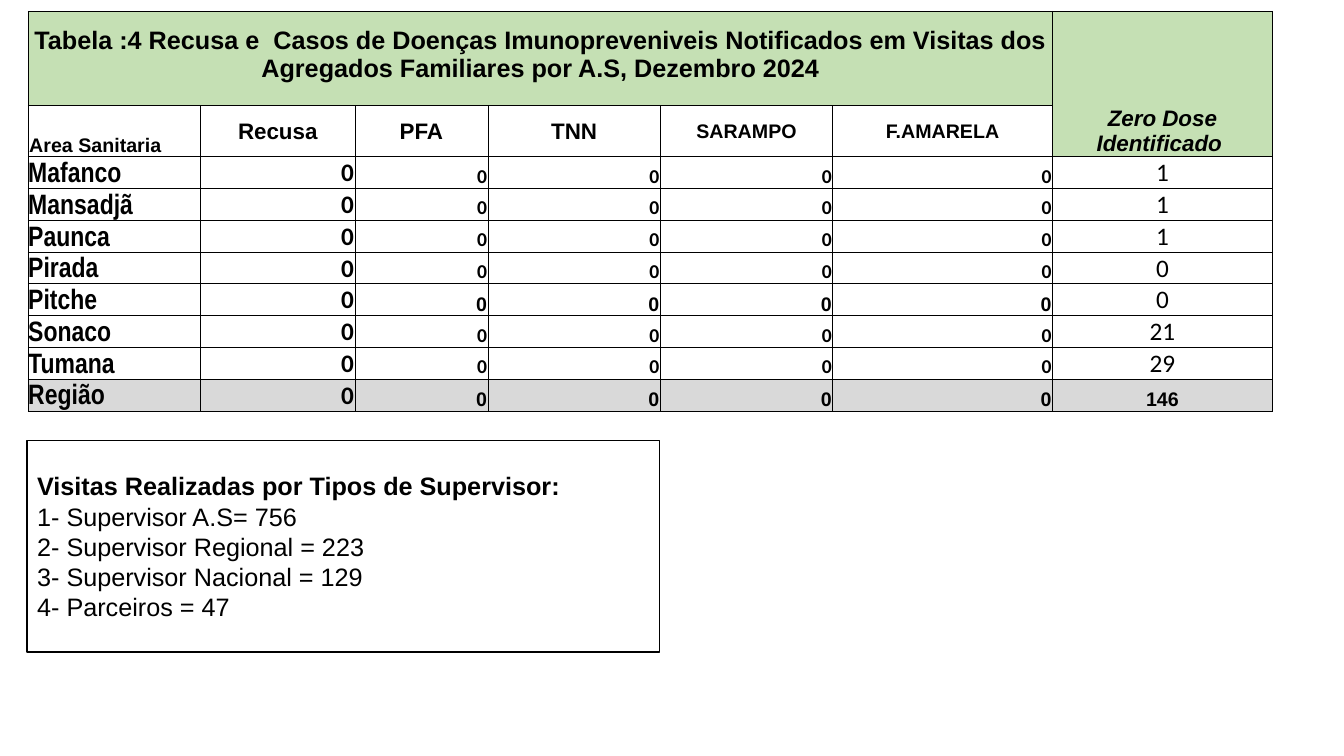
from dataclasses import dataclass

from lxml.etree import SubElement
from pptx import Presentation
from pptx.dml.color import RGBColor
from pptx.enum.shapes import MSO_SHAPE
from pptx.enum.text import MSO_ANCHOR, PP_ALIGN
from pptx.oxml.ns import qn
from pptx.util import Inches, Pt


@dataclass(frozen=True)
class Theme:
    black: RGBColor = RGBColor(0x00, 0x00, 0x00)
    white: RGBColor = RGBColor(0xFF, 0xFF, 0xFF)
    green: RGBColor = RGBColor(0xC5, 0xE0, 0xB4)
    grey: RGBColor = RGBColor(0xD9, 0xD9, 0xD9)
    main_font: str = "Arial"
    name_font: str = "Arial Narrow"
    number_font: str = "Calibri"
    name_size: int = 20
    title_size: int = 18
    heading_size: int = 16
    small_size: int = 14
    border_width: float = 0.5
    outline_width: float = 1


THEME = Theme()
TITLE = ("Tabela :4 Recusa e  Casos de Doenças Imunopreveniveis Notificados em Visitas dos "
         "Agregados Familiares por A.S, Dezembro 2024")
ZERO_DOSE_HEADING = "Zero Dose Identificado "
AREA_HEADING = "Area Sanitaria"
CASE_HEADINGS = {
    "Recusa": THEME.heading_size,
    "PFA": THEME.heading_size,
    "TNN": THEME.heading_size,
    "SARAMPO": THEME.small_size,
    "F.AMARELA": THEME.small_size,
}
ZERO_DOSES = {
    "Mafanco": 1,
    "Mansadjã": 1,
    "Paunca": 1,
    "Pirada": 0,
    "Pitche": 0,
    "Sonaco": 21,
    "Tumana": 29,
    "Região": 146,
}
TOTAL_AREA = "Região"
ARIAL_COUNT_AREAS = ("Pitche", TOTAL_AREA)
COLUMN_WIDTHS = (1.71, 1.53, 1.32, 1.71, 1.71, 2.18, 2.18)
TITLE_HEIGHT, HEADING_HEIGHT, AREA_HEIGHT = 0.94, 0.5, 0.31
VISITS_HEADING = "Visitas Realizadas por Tipos de Supervisor:"
VISITS = {
    "Supervisor A.S=": 756,
    "Supervisor Regional =": 223,
    "Supervisor Nacional =": 129,
    "Parceiros =": 47,
}


def format_paragraph(paragraph, size, font=THEME.main_font, bold=True, italic=False,
                     align=PP_ALIGN.LEFT):
    paragraph.alignment = align
    for run in paragraph.runs:
        run.font.name = font
        run.font.size = Pt(size)
        run.font.bold = bold
        run.font.italic = italic
        run.font.color.rgb = THEME.black


def add_borders(cell):
    properties = cell._tc.get_or_add_tcPr()
    for side in ("a:lnL", "a:lnR", "a:lnT", "a:lnB"):
        line = SubElement(properties, qn(side), w=str(Pt(THEME.border_width)))
        fill = SubElement(line, qn("a:solidFill"))
        SubElement(fill, qn("a:srgbClr"), val=str(THEME.black))


def fill_cell(cell, text, size, fill=THEME.white, anchor=MSO_ANCHOR.BOTTOM,
              margin=0.01, margin_bottom=0, **style):
    cell.text_frame.text = text
    cell.vertical_anchor = anchor
    cell.margin_left = cell.margin_top = cell.margin_right = Inches(margin)
    cell.margin_bottom = Inches(margin_bottom)
    cell.fill.solid()
    cell.fill.fore_color.rgb = fill
    format_paragraph(cell.text_frame.paragraphs[0], size, **style)


def fill_headings(table):
    last = len(COLUMN_WIDTHS) - 1
    table.cell(0, 0).merge(table.cell(0, last - 1))
    table.cell(0, last).merge(table.cell(1, last))
    fill_cell(table.cell(0, 0), TITLE, THEME.title_size, THEME.green,
              margin_bottom=0.23, align=PP_ALIGN.CENTER)
    fill_cell(table.cell(0, last), ZERO_DOSE_HEADING, THEME.heading_size, THEME.green,
              italic=True, align=PP_ALIGN.CENTER)
    fill_cell(table.cell(1, 0), AREA_HEADING, THEME.small_size)
    for column, (heading, size) in enumerate(CASE_HEADINGS.items(), start=1):
        fill_cell(table.cell(1, column), heading, size, anchor=MSO_ANCHOR.MIDDLE,
                  align=PP_ALIGN.CENTER)


def fill_area(table, row, area, zero_dose):
    is_total = area == TOTAL_AREA
    fill = THEME.grey if is_total else THEME.white
    count_font = THEME.main_font if area in ARIAL_COUNT_AREAS else THEME.number_font
    fill_cell(table.cell(row, 0), area, THEME.name_size, fill, margin=0, font=THEME.name_font)
    for column in range(1, len(CASE_HEADINGS) + 1):
        is_refusal = column == 1
        fill_cell(table.cell(row, column), "0",
                  THEME.title_size if is_refusal else THEME.small_size, fill,
                  font=THEME.number_font if is_refusal else count_font,
                  align=PP_ALIGN.RIGHT)
    fill_cell(table.cell(row, len(COLUMN_WIDTHS) - 1), str(zero_dose),
              THEME.small_size if is_total else THEME.title_size, fill,
              font=THEME.main_font if is_total else THEME.number_font,
              bold=is_total, align=PP_ALIGN.CENTER)


def add_cases_table(slide, left, top):
    heights = (TITLE_HEIGHT, HEADING_HEIGHT) + (AREA_HEIGHT,) * len(ZERO_DOSES)
    table = slide.shapes.add_table(
        len(heights), len(COLUMN_WIDTHS), Inches(left), Inches(top),
        Inches(sum(COLUMN_WIDTHS)), Inches(sum(heights))).table
    table.first_row = False
    table.horz_banding = False
    for column, width in zip(table.columns, COLUMN_WIDTHS):
        column.width = Inches(width)
    for row, height in zip(table.rows, heights):
        row.height = Inches(height)
    for cell in table.iter_cells():
        add_borders(cell)
    fill_headings(table)
    for row, (area, zero_dose) in enumerate(ZERO_DOSES.items(), start=2):
        fill_area(table, row, area, zero_dose)


def add_visits_box(slide, left, top, width, height):
    box = slide.shapes.add_shape(MSO_SHAPE.RECTANGLE, Inches(left), Inches(top),
                                 Inches(width), Inches(height))
    box.shadow.inherit = False
    box.fill.solid()
    box.fill.fore_color.rgb = THEME.white
    box.line.color.rgb = THEME.black
    box.line.width = Pt(THEME.outline_width)
    text_frame = box.text_frame
    text_frame.word_wrap = True
    text_frame.vertical_anchor = MSO_ANCHOR.MIDDLE
    visits = [f"{number}- {label} {count}"
              for number, (label, count) in enumerate(VISITS.items(), start=1)]
    text_frame.text = "\n".join([VISITS_HEADING] + visits)
    for index, paragraph in enumerate(text_frame.paragraphs):
        format_paragraph(paragraph, THEME.title_size, bold=index == 0)


def main():
    presentation = Presentation()
    presentation.slide_width = Inches(13.33)
    presentation.slide_height = Inches(7.5)
    slide = presentation.slides.add_slide(presentation.slide_layouts[6])
    add_cases_table(slide, 0.28, 0.11)
    add_visits_box(slide, 0.27, 4.37, 6.27, 2.1)
    presentation.save("out.pptx")


if __name__ == "__main__":
    main()
